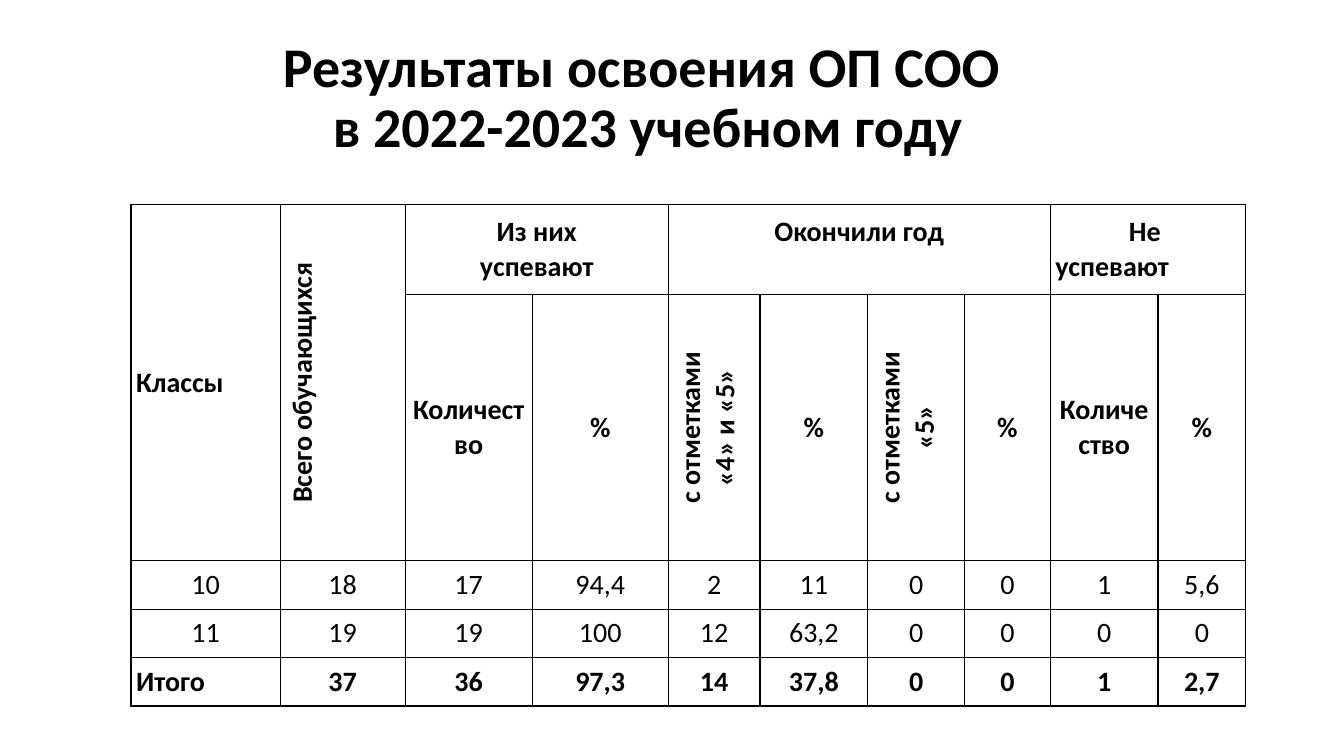
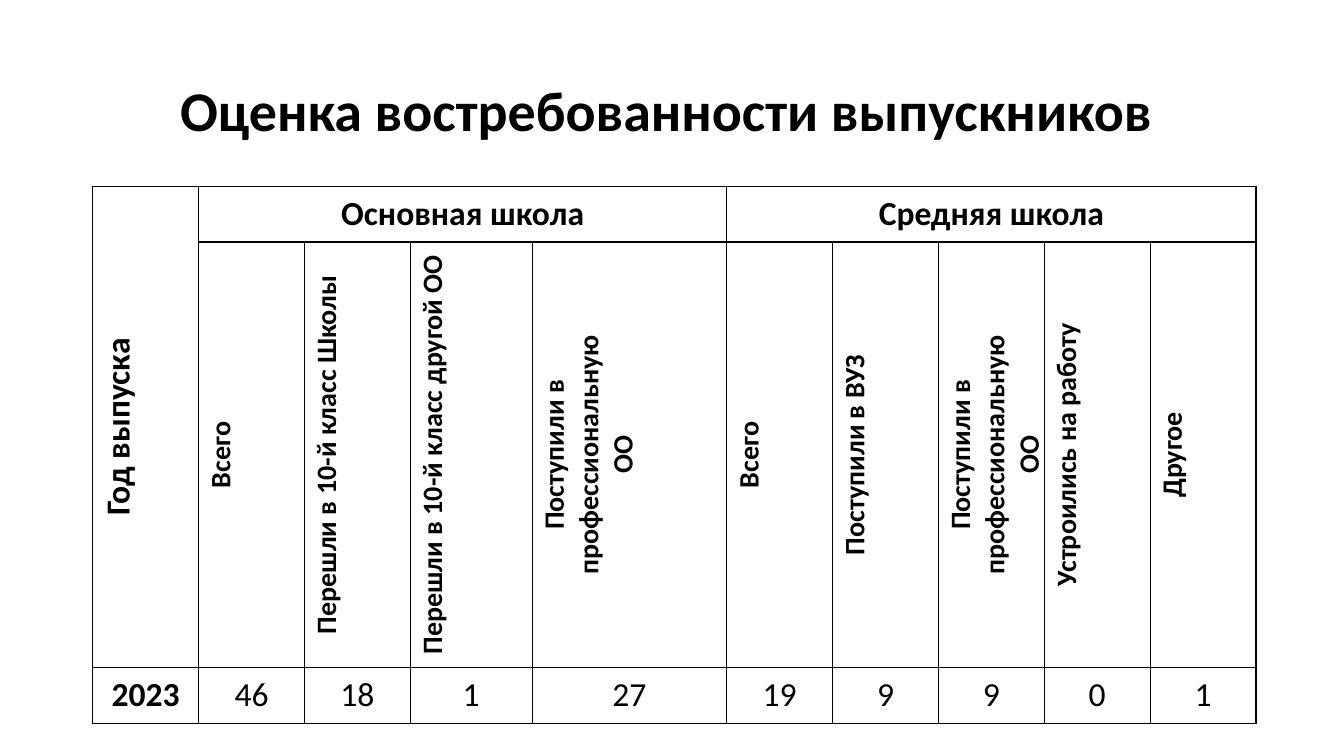
import lxml.etree
import pptx
import pptx.dml.color
import pptx.enum.text
import pptx.oxml.ns
import pptx.util

ALIGN = pptx.enum.text.PP_ALIGN
MIDDLE = pptx.enum.text.MSO_ANCHOR.MIDDLE


def color(hex_string):
    """Return the RGB colour of a hex string."""
    return pptx.dml.color.RGBColor.from_string(hex_string)


class Deck:
    """Hold the style and the current slide and table, on a grid of tenths of an inch."""

    INK, PAPER, FONT = "000000", "FFFFFF", "Calibri"
    TITLE_SIZE, BORDER = 40, 1
    INSET, INDENT = 0.5, 0.8

    def __init__(self):
        """Start a widescreen presentation."""
        self.show = pptx.Presentation()
        self.show.slide_width = self.grid(133.33)
        self.show.slide_height = self.grid(75)

    @staticmethod
    def grid(units):
        """Convert grid units to a length."""
        return pptx.util.Inches(units / 10)

    def style(self, paragraph, size, bold, align):
        """Format a paragraph and its runs."""
        paragraph.alignment = align
        for run in paragraph.runs:
            run.font.name = self.FONT
            run.font.size = pptx.util.Pt(size)
            run.font.bold = bold
            run.font.color.rgb = color(self.INK)

    def slide(self, text, left, top, width, height):
        """Add a slide with a centred title."""
        self.current = self.show.slides.add_slide(self.show.slide_layouts[5])
        title = self.current.shapes.title
        title.left, title.top = self.grid(left), self.grid(top)
        title.width, title.height = self.grid(width), self.grid(height)
        title.text_frame.text = text
        title.text_frame.vertical_anchor = MIDDLE
        for paragraph in title.text_frame.paragraphs:
            paragraph.line_spacing = 0.9
            self.style(paragraph, self.TITLE_SIZE, True, ALIGN.CENTER)

    def table(self, left, top, columns, rows):
        """Add an empty ruled table."""
        frame = self.current.shapes.add_table(
            len(rows), len(columns), self.grid(left), self.grid(top),
            self.grid(sum(columns)), self.grid(sum(rows)))
        self.grid_table = frame.table
        self.grid_table.first_row = self.grid_table.horz_banding = False
        for column, width in zip(self.grid_table.columns, columns):
            column.width = self.grid(width)
        for row, height in zip(self.grid_table.rows, rows):
            row.height = self.grid(height)
        for cell in self.grid_table.iter_cells():
            self.rule(cell)

    def rule(self, cell):
        """Give a cell its borders, fill, margins and anchor."""
        qn = pptx.oxml.ns.qn
        properties = cell._tc.get_or_add_tcPr()
        for side in ("a:lnL", "a:lnR", "a:lnT", "a:lnB"):
            line = lxml.etree.SubElement(
                properties, qn(side), w=str(pptx.util.Pt(self.BORDER)))
            fill = lxml.etree.SubElement(line, qn("a:solidFill"))
            lxml.etree.SubElement(fill, qn("a:srgbClr"), val=self.INK)
        cell.fill.solid()
        cell.fill.fore_color.rgb = color(self.PAPER)
        cell.margin_left = cell.margin_right = self.grid(self.INSET)
        cell.margin_top = cell.margin_bottom = self.grid(self.INSET)
        cell.vertical_anchor = MIDDLE

    def cell(self, row, column, text, size=20, bold=True, down=1, across=1,
             justified=False):
        """Write a cell, merged over the given rows and columns."""
        cell = self.grid_table.cell(row, column)
        if down * across > 1:
            cell.merge(self.grid_table.cell(row + down - 1, column + across - 1))
        cell.text_frame.text = text
        for paragraph in cell.text_frame.paragraphs:
            self.style(paragraph, size, bold, ALIGN.CENTER)
        if justified:
            paragraph.alignment = ALIGN.JUSTIFY
        return cell

    def upright(self, row, column, text, size=20, down=1, indented=True, gap=0):
        """Write a heading that reads from bottom to top."""
        cell = self.cell(row, column, text, size, down=down)
        cell._tc.get_or_add_tcPr().set("vert", "vert270")
        if indented:
            for paragraph in cell.text_frame.paragraphs:
                paragraph.space_before = paragraph.space_after = pptx.util.Pt(gap)
                properties = paragraph._p.get_or_add_pPr()
                for margin in ("marL", "marR"):
                    properties.set(margin, str(self.grid(self.INDENT)))

    def values(self, row, texts, size=20, bold=False, first_bold=False,
               first_justified=False):
        """Write a row of values."""
        for column, text in enumerate(texts):
            first = column == 0
            self.cell(row, column, text, size, bold or (first and first_bold),
                      justified=first and first_justified)


def results(deck):
    """Build the slide with the results of the school year."""
    deck.slide("Результаты освоения ОП СОО \vв 2022-2023 учебном году",
               4, 2.6, 120.5, 14.5)
    deck.table(13, 20.3,
               [14.8, 12.4, 12.6, 13.5, 9.1, 10.7, 9.6, 8.5, 10.7, 8.7],
               [8.9, 24.3] + [4.8] * 3)
    deck.cell(0, 0, "Классы", down=2, justified=True)
    deck.upright(0, 1, "Всего обучающихся", down=2)
    deck.cell(0, 2, "Из них\vуспевают", across=2)
    finished = deck.cell(0, 4, "Окончили год", across=4)
    finished.margin_bottom = deck.grid(3.9)
    deck.cell(0, 8, "Не \nуспевают", across=2, justified=True)
    for column in (2, 8):
        deck.cell(1, column, "Количество")
    for column in (3, 5, 7, 9):
        deck.cell(1, column, "%")
    deck.upright(1, 4, "с отметками\v«4» и «5»")
    deck.upright(1, 6, "с отметками\v«5»")
    deck.values(2, ["10", "18", "17", "94,4", "2", "11", "0", "0", "1", "5,6"])
    deck.values(3, ["11", "19", "19", "100", "12", "63,2", "0", "0", "0", "0"])
    deck.values(4, ["Итого", "37", "36", "97,3", "14", "37,8", "0", "0", "1", "2,7"],
                bold=True, first_justified=True)


def graduates(deck):
    """Build the slide with the paths of the graduates."""
    deck.slide("Оценка востребованности выпускников ", 9.2, 4, 115, 14.5)
    deck.table(9.2, 18.5, [10.5] * 3 + [12.1, 19.3] + [10.5] * 5,
               [5.5, 30.1, 5.5])
    deck.upright(0, 0, "Год выпуска", size=24, down=2, gap=5)
    deck.cell(0, 1, "Основная школа", size=24, across=4)
    deck.cell(0, 5, "Средняя школа", size=24, across=5)
    total, vocational = "Всего", "Поступили в\vпрофессиональную\vОО"
    paths = [total, "Перешли в 10-й класс Школы", "Перешли в 10-й класс другой ОО",
             vocational, total, "Поступили в ВУЗ", vocational,
             "Устроились на работу", "Другое"]
    for column, path_label in enumerate(paths, 1):
        deck.upright(1, column, path_label, indented=column != 5, gap=5)
    deck.values(2, ["2023", "46", "18", "1", "27", "19", "9", "9", "0", "1"],
                size=24, first_bold=True)


def main():
    """Build and save the presentation."""
    deck = Deck()
    results(deck)
    graduates(deck)
    deck.show.save("out.pptx")


if __name__ == "__main__":
    main()
